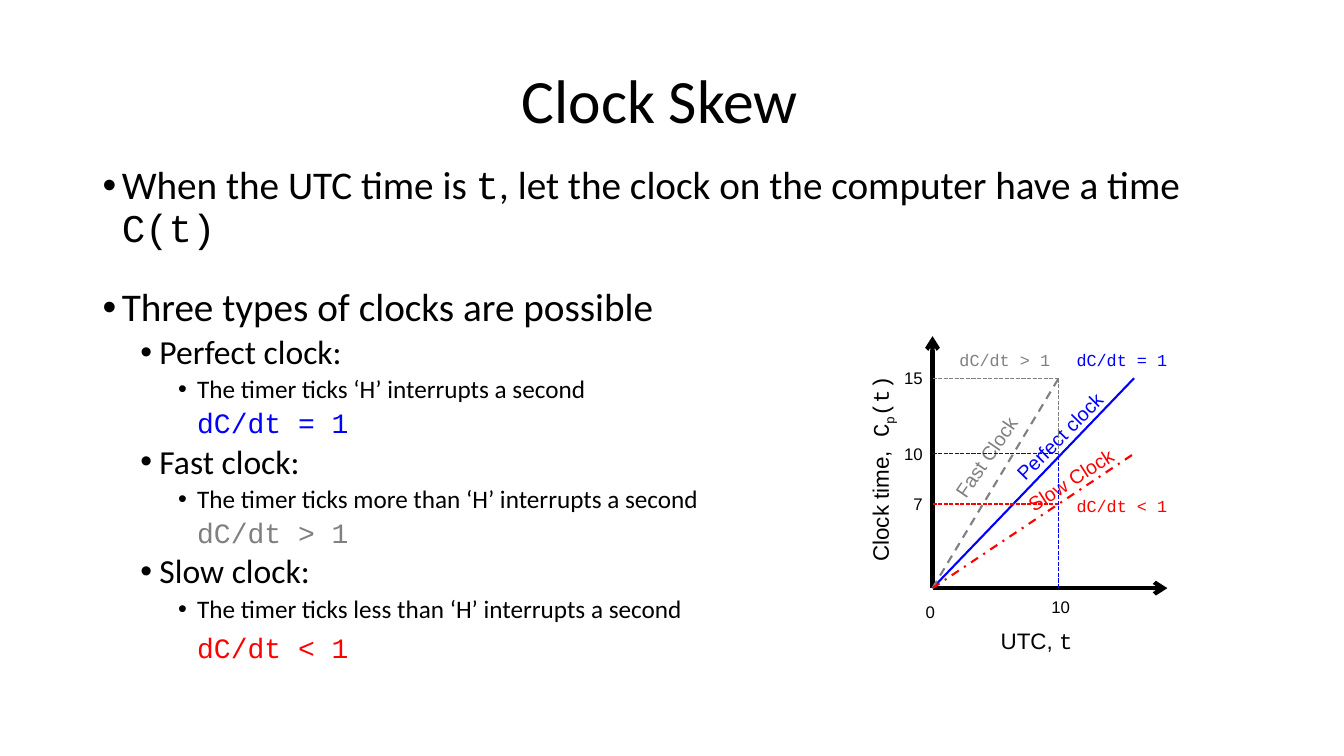
import pptx
import pptx.dml.color
import pptx.enum.dml
import pptx.enum.shapes
import pptx.enum.text
import pptx.oxml.ns
import pptx.util
from lxml import etree

Cm = pptx.util.Cm
Pt = pptx.util.Pt
Align = pptx.enum.text.PP_ALIGN
Anchor = pptx.enum.text.MSO_ANCHOR
Dash = pptx.enum.dml.MSO_LINE
COLORS = {"ink": "000000", "perfect": "0000FF", "fast": "808080", "slow": "FF0000"}
SANS, BODY, MONO = "Arial", "Calibri", "Courier New"


def color(name):
    return pptx.dml.color.RGBColor.from_string(COLORS[name])


def add_element(parent, tag, **attributes):
    return etree.SubElement(parent, pptx.oxml.ns.qn(tag), **attributes)


def add_runs(paragraph, parts, size, ink="ink"):
    """Write (text, font) parts as runs of one size and colour."""
    for text, font in parts:
        run = paragraph.add_run()
        run.text = text
        run.font.name = font
        run.font.size = Pt(size)
        run.font.color.rgb = color(ink)


def add_box(slide, left, top, width, height):
    shape = slide.shapes.add_textbox(Cm(left), Cm(top), Cm(width), Cm(height))
    shape.text_frame.word_wrap = True
    return shape


def add_title(slide, left, top, width, height):
    frame = add_box(slide, left, top, width, height).text_frame
    frame.vertical_anchor = Anchor.MIDDLE
    paragraph = frame.paragraphs[0]
    paragraph.alignment = Align.CENTER
    paragraph.line_spacing = 0.9
    add_runs(paragraph, [("Clock Skew", BODY)], 44)


def add_outline(slide, left, top, width, height):
    # Each row: level, size, space before, bulleted, colour, parts
    rows = [
        (0, 28, 0, True, "ink", [
            ("When the UTC time is ", BODY), ("t", MONO),
            (", let the clock on the computer have a time ", BODY), ("C(t)", MONO)]),
        (0, 28, 26.5, True, "ink", [("Three types of clocks are possible", BODY)]),
    ]
    clocks = [("Perfect", "", "=", "perfect", 3.8),
              ("Fast", "more than ", ">", "fast", 3.8),
              ("Slow", "less than ", "<", "slow", 7.5)]
    for name, rate, sign, ink, space in clocks:
        rows += [
            (1, 24, 3.8, True, "ink", [(f"{name} clock:", BODY)]),
            (2, 18, 3.8, True, "ink",
             [(f"The timer ticks {rate}‘H’ interrupts a second", BODY)]),
            (2, 20, space, False, ink, [(f"dC/dt {sign} 1", MONO)]),
        ]

    frame = add_box(slide, left, top, width, height).text_frame
    for index, (level, size, space, bulleted, ink, parts) in enumerate(rows):
        paragraph = frame.add_paragraph() if index else frame.paragraphs[0]
        paragraph.level = level
        paragraph.line_spacing = 0.9
        paragraph.space_before = Pt(space)
        properties = paragraph._p.get_or_add_pPr()
        properties.set("marL", str(Cm(0.48 + 0.95 * level)))
        properties.set("indent", str(Cm(-0.48) if bulleted else 0))
        if bulleted:
            add_element(properties, "a:buFont", typeface=SANS)
            add_element(properties, "a:buChar", char="•")
        else:
            add_element(properties, "a:buNone")
        add_runs(paragraph, parts, size, ink)


def add_graph(slide, left, top, width, height):
    """The axes fill the box; positions are cm right of and above its lower left corner."""
    base = top + height
    ten, end = 3.18, 5.08
    levels = {"15": 5.29, "10": 3.39, "7": 2.12}

    def line(start, finish, ink, weight, dash=None, arrow=False):
        connector = slide.shapes.add_connector(
            pptx.enum.shapes.MSO_CONNECTOR.STRAIGHT,
            Cm(left + start[0]), Cm(base - start[1]),
            Cm(left + finish[0]), Cm(base - finish[1]))
        connector.line.color.rgb = color(ink)
        connector.line.width = Pt(weight)
        if dash:
            connector.line.dash_style = dash
        if arrow:
            add_element(connector.line._get_or_add_ln(), "a:tailEnd", type="arrow")
        add_element(connector._element.spPr, "a:effectLst")

    def label(center, box, parts, size, ink="ink", angle=0, align=Align.LEFT, wrap=True):
        shape = add_box(slide, left + center[0] - box[0] / 2,
                        base - center[1] - box[1] / 2, *box)
        shape.rotation = angle
        shape.text_frame.word_wrap = wrap
        paragraph = shape.text_frame.paragraphs[0]
        paragraph.alignment = align
        add_runs(paragraph, parts, size, ink)
        return paragraph

    # Axes
    for tip in [(width, 0), (0, height)]:
        line((0, 0), tip, "ink", 3, arrow=True)

    # Clock lines, each with its name along it and its slope beside it
    clocks = [
        ("Perfect clock", "perfect", (end, levels["15"]), None, (3.3, 3.91), 314.7,
         "dC/dt = 1", (4.8, 5.74)),
        ("Fast Clock", "fast", (ten, levels["15"]), Dash.DASH, (1.57, 3.61), 304.4,
         "dC/dt > 1", (1.85, 5.74)),
        ("Slow Clock", "slow", (end, levels["10"]), Dash.DASH_DOT, (3.76, 2.9), 327.2,
         "dC/dt < 1", (4.8, 2.08)),
    ]
    for name, ink, tip, dash, name_center, angle, slope, slope_center in clocks:
        line((0, 0), tip, ink, 1.5, dash)
        label(name_center, (3.6, 0.86), [(name, SANS)], 14, ink, angle)
        label(slope_center, (2.84, 0.76), [(slope, MONO)], 12, ink, wrap=False)

    # Guides and scale
    for (value, level), ink in zip(levels.items(), ["fast", "perfect", "slow"]):
        line((0, level), (ten, level), ink, 1, Dash.SQUARE_DOT)
        label((-0.53, level), (1.07, 0.76), [(value, SANS)], 12, align=Align.RIGHT)
    for value, ink in [("15", "fast"), ("7", "slow"), ("10", "perfect")]:
        line((ten, 0), (ten, levels[value]), ink, 1, Dash.SQUARE_DOT)
    label((3.28, -0.46), (1.07, 0.76), [("10", SANS)], 12)
    label((0, -0.61), (0.84, 0.76), [("0", SANS)], 12)

    # Axis titles
    label((2.74, -1.33), (2.54, 0.94), [("UTC, ", SANS), ("t", MONO)], 16)
    clock_time = label((-1.32, 3.06), (5.28, 0.94),
                       [("Clock time,", SANS), (" C", MONO), ("p", MONO), ("(t)", MONO)],
                       16, angle=270)
    clock_time.runs[2]._r.get_or_add_rPr().set("baseline", "-25000")


def main():
    presentation = pptx.Presentation()
    presentation.slide_width = Cm(33.87)
    presentation.slide_height = Cm(19.05)
    slide = presentation.slides.add_slide(presentation.slide_layouts[6])
    add_title(slide, 4.88, 0.76, 23.5, 3.68)
    add_outline(slide, 2.34, 4.06, 28.35, 12.57)
    add_graph(slide, 23.5, 8.47, 5.92, 6.35)
    presentation.save("out.pptx")


if __name__ == "__main__":
    main()
